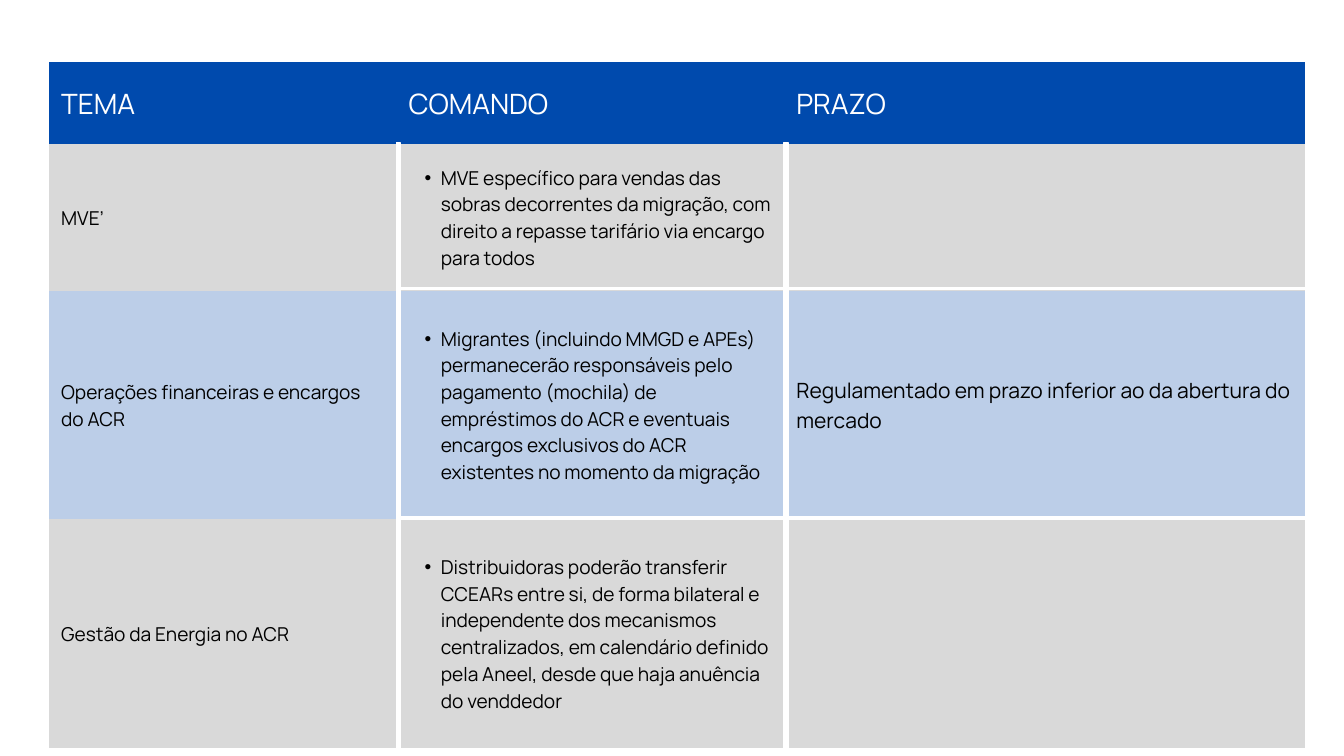
from dataclasses import dataclass
from itertools import accumulate

from lxml.etree import SubElement
from pptx import Presentation
from pptx.dml.color import RGBColor
from pptx.enum.shapes import MSO_CONNECTOR, MSO_SHAPE
from pptx.enum.text import MSO_ANCHOR
from pptx.oxml import parse_xml
from pptx.oxml.ns import nsdecls, qn
from pptx.slide import Slide
from pptx.table import Table, _Cell
from pptx.text.text import _Paragraph
from pptx.util import Pt


@dataclass(frozen=True)
class TextStyle:
    size: float
    spacing: float
    color: RGBColor
    bullet: bool = False


BLACK = RGBColor(0, 0, 0)
WHITE = RGBColor(255, 255, 255)


@dataclass(frozen=True)
class Theme:
    font: str = "Manrope"
    header_fill: RGBColor = RGBColor(0x00, 0x4A, 0xAD)
    gray_fill: RGBColor = RGBColor(0xD9, 0xD9, 0xD9)
    blue_fill: RGBColor = RGBColor(0xBC, 0xCE, 0xE8)
    divider: RGBColor = WHITE
    header: TextStyle = TextStyle(30, 42, WHITE)
    topic: TextStyle = TextStyle(20.5, 28.6, BLACK)
    command: TextStyle = TextStyle(20.5, 28.6, BLACK, bullet=True)
    deadline: TextStyle = TextStyle(22.5, 31.4, BLACK)


@dataclass(frozen=True)
class Row:
    height: float
    fill: RGBColor
    styles: tuple[TextStyle, ...]
    texts: tuple[str, ...]


THEME = Theme()
PAGE_WIDTH, PAGE_HEIGHT = 1440, 810
TABLE_LEFT, TABLE_TOP = 52.56, 66.96
COLUMN_WIDTHS = (372.24, 415.44, 558)
CELL_INSET = 13
BULLET_INDENT, BULLET_HANG = 34.56, 17.28
DIVIDER_TOP, DIVIDER_WIDTH = 152.64, 3.6
DIVIDER_LEFTS = (424.8, 840.24)
SEPARATOR_HEIGHTS = (308.88, 555.12)

BODY_STYLES = (THEME.topic, THEME.command, THEME.deadline)
ROWS = (
    Row(87.84, THEME.header_fill, (THEME.header,) * 3, ("TEMA", "COMANDO", "PRAZO")),
    Row(156.96, THEME.gray_fill, BODY_STYLES, (
        "MVE’",
        "MVE específico para vendas das sobras decorrentes da migração, "
        "com direito a repasse tarifário via encargo para todos",
        "",
    )),
    Row(244.8, THEME.blue_fill, BODY_STYLES, (
        "Operações financeiras e encargos do ACR",
        "Migrantes (incluindo MMGD e APEs) permanecerão responsáveis pelo "
        "pagamento (mochila) de empréstimos do ACR e eventuais encargos "
        "exclusivos do ACR existentes no momento da migração",
        "Regulamentado em prazo inferior ao da abertura do mercado",
    )),
    Row(244.8, THEME.gray_fill, BODY_STYLES, (
        "Gestão da Energia no ACR",
        "Distribuidoras poderão transferir CCEARs entre si, de forma bilateral "
        "e independente dos mecanismos centralizados, em calendário definido "
        "pela Aneel, desde que haja anuência do venddedor",
        "",
    )),
)


def add_bullet(paragraph: _Paragraph) -> None:
    paragraph.level = 1
    properties = paragraph._p.get_or_add_pPr()
    properties.set("marL", str(Pt(BULLET_INDENT)))
    properties.set("indent", str(-Pt(BULLET_HANG)))
    SubElement(properties, qn("a:buFont")).set("typeface", "Arial")
    SubElement(properties, qn("a:buChar")).set("char", "•")


def hide_borders(cell: _Cell) -> None:
    properties = cell._tc.get_or_add_tcPr()
    for position, side in enumerate(("lnL", "lnR", "lnT", "lnB")):
        border = parse_xml(f'<a:{side} {nsdecls("a")} w="0"><a:noFill/></a:{side}>')
        properties.insert(position, border)


def fill_cell(cell: _Cell, text: str, style: TextStyle, fill: RGBColor) -> None:
    cell.fill.solid()
    cell.fill.fore_color.rgb = fill
    hide_borders(cell)
    cell.vertical_anchor = MSO_ANCHOR.MIDDLE
    cell.margin_left = cell.margin_right = Pt(CELL_INSET)
    cell.margin_top = cell.margin_bottom = Pt(CELL_INSET)
    if not text:
        return
    paragraph = cell.text_frame.paragraphs[0]
    paragraph.line_spacing = Pt(style.spacing)
    if style.bullet:
        add_bullet(paragraph)
    span = paragraph.add_run()
    span.text = text
    span.font.name = THEME.font
    span.font.size = Pt(style.size)
    span.font.color.rgb = style.color


def add_topic_table(page: Slide) -> Table:
    frame = page.shapes.add_table(
        len(ROWS), len(COLUMN_WIDTHS), Pt(TABLE_LEFT), Pt(TABLE_TOP),
        Pt(sum(COLUMN_WIDTHS)), Pt(sum(row.height for row in ROWS)),
    )
    table = frame.table
    table.first_row = table.horz_banding = False
    for column, width in zip(table.columns, COLUMN_WIDTHS):
        column.width = Pt(width)
    for table_row, row in zip(table.rows, ROWS):
        table_row.height = Pt(row.height)
        for cell, text, style in zip(table_row.cells, row.texts, row.styles):
            fill_cell(cell, text, style, row.fill)
    return table


def add_column_divider(page: Slide, left: float) -> None:
    bar = page.shapes.add_shape(
        MSO_SHAPE.RECTANGLE, Pt(left), Pt(DIVIDER_TOP),
        Pt(DIVIDER_WIDTH), Pt(PAGE_HEIGHT - DIVIDER_TOP),
    )
    bar.shadow.inherit = False
    bar.fill.solid()
    bar.fill.fore_color.rgb = THEME.divider
    bar.line.color.rgb = THEME.divider
    bar.line.width = Pt(2)


def add_row_separator(page: Slide, height: float) -> None:
    line = page.shapes.add_connector(
        MSO_CONNECTOR.STRAIGHT, Pt(DIVIDER_LEFTS[0]), Pt(height),
        Pt(PAGE_WIDTH), Pt(height),
    )
    line.line.color.rgb = THEME.divider
    line.line.width = Pt(3.75)
    SubElement(line._element.spPr, qn("a:effectLst"))


def main() -> None:
    deck = Presentation()
    deck.slide_width, deck.slide_height = Pt(PAGE_WIDTH), Pt(PAGE_HEIGHT)
    page = deck.slides.add_slide(deck.slide_layouts[6])
    add_topic_table(page)
    for left in DIVIDER_LEFTS:
        add_column_divider(page, left)
    for height in SEPARATOR_HEIGHTS:
        add_row_separator(page, height)
    deck.save("out.pptx")


if __name__ == "__main__":
    main()
